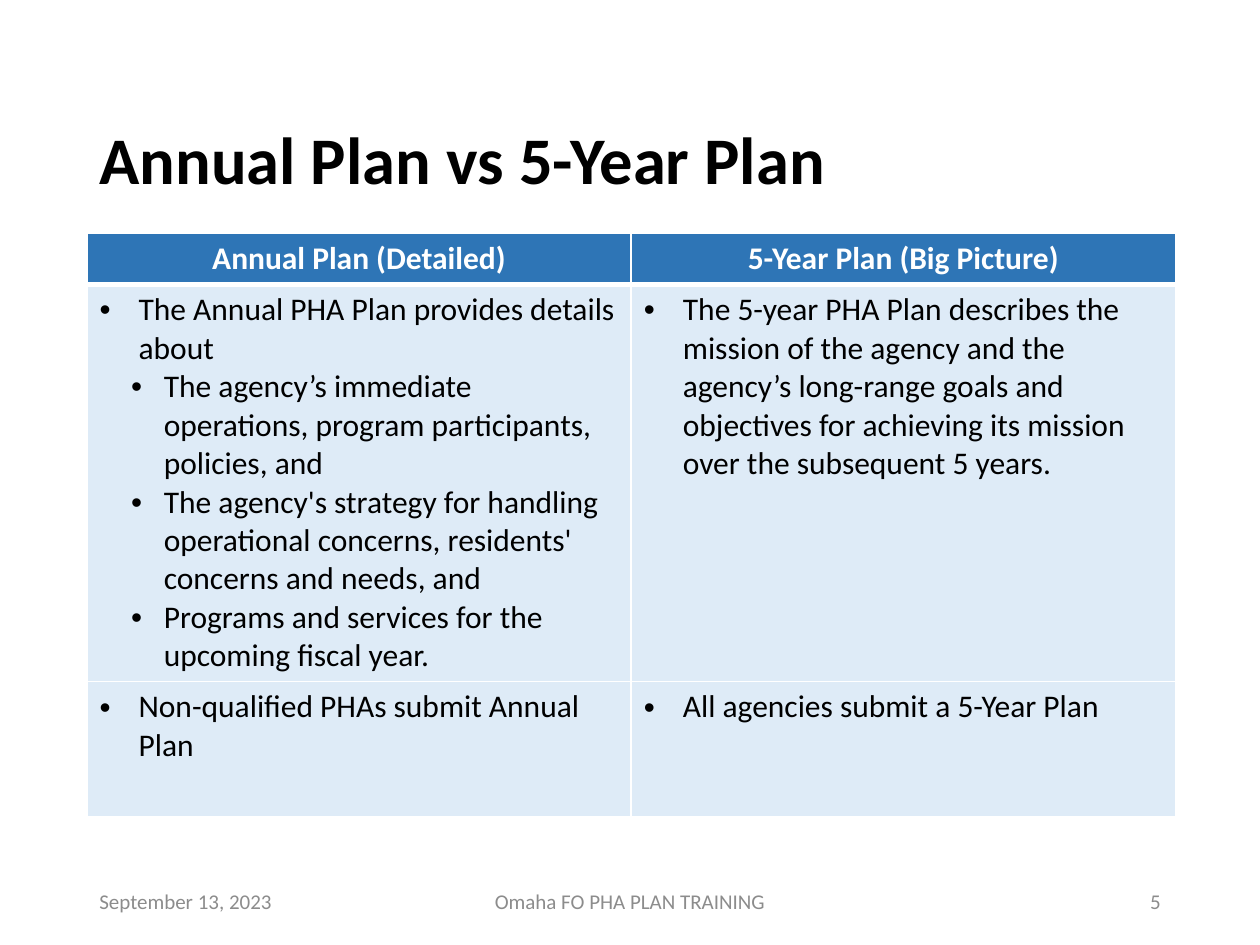
from dataclasses import dataclass

from lxml.etree import SubElement
from pptx import Presentation
from pptx.dml.color import RGBColor
from pptx.enum.text import MSO_ANCHOR, PP_ALIGN
from pptx.oxml.ns import qn
from pptx.util import Inches, Pt


@dataclass(frozen=True)
class Theme:
    font: str = "Calibri"
    text: str = "000000"
    light: str = "FFFFFF"
    header: str = "2E75B6"
    body: str = "DEEBF7"
    muted: str = "8C8C8C"
    title_size: int = 38
    table_size: int = 18
    footer_size: int = 12
    border: int = 1
    heavy_border: int = 3


THEME = Theme()
WIDTH, HEIGHT = Inches(10), Inches(7.5)
MARGIN = 0.069
INDENTS = [(0.31, -0.31), (0.51, -0.26)]
ROW_SHARES = [0.4, 3.15, 1.07]

HEADINGS = ["Annual Plan (Detailed)", "5-Year Plan (Big Picture)"]
COMPARISON = [
    [
        [
            (0, "The Annual PHA Plan provides details about"),
            (1, "The agency’s immediate operations, program participants, policies, and"),
            (1, "The agency's strategy for handling operational concerns, "
                "residents' concerns and needs, and"),
            (1, "Programs and services for the upcoming fiscal year."),
        ],
        [
            (0, "The 5-year PHA Plan describes the mission of the agency and the agency’s "
                "long-range goals and objectives for achieving its mission over the "
                "subsequent 5 years.  "),
        ],
    ],
    [
        [(0, "Non-qualified PHAs submit Annual Plan")],
        [(0, "All agencies submit a 5-Year Plan")],
    ],
]
FOOTER = [
    (0, 0.225, "September 13, 2023", PP_ALIGN.LEFT),
    (0.262, 0.338, "Omaha FO PHA PLAN TRAINING", PP_ALIGN.CENTER),
    (0.637, 0.225, "5", PP_ALIGN.RIGHT),
]


def share_box(left, top, width, height):
    return (int(WIDTH * left), int(HEIGHT * top), int(WIDTH * width), int(HEIGHT * height))


def write_text(paragraph, text, *, size, color, bold=False, align=PP_ALIGN.LEFT, level=None):
    paragraph.alignment = align
    if level is not None:
        paragraph.level = level
        margin, indent = INDENTS[level]
        properties = paragraph._p.get_or_add_pPr()
        properties.set("marL", str(Inches(margin)))
        properties.set("indent", str(Inches(indent)))
        SubElement(properties, qn("a:buFont"), typeface="Arial")
        SubElement(properties, qn("a:buChar"), char="•")
    run = paragraph.add_run()
    run.text = text
    run.font.name = THEME.font
    run.font.size = Pt(size)
    run.font.bold = bold
    run.font.color.rgb = RGBColor.from_string(color)


def style_cell(cell, fill, top, bottom):
    properties = cell._tc.get_or_add_tcPr()
    sides = {"lnL": THEME.border, "lnR": THEME.border, "lnT": top, "lnB": bottom}
    for side, weight in sides.items():
        line = SubElement(properties, qn(f"a:{side}"), w=str(Pt(weight)))
        SubElement(SubElement(line, qn("a:solidFill")), qn("a:srgbClr"), val=THEME.light)
    cell.fill.solid()
    cell.fill.fore_color.rgb = RGBColor.from_string(fill)


def place_title(slide, box):
    title = slide.shapes.title
    title.left, title.top, title.width, title.height = box
    title.text_frame.vertical_anchor = MSO_ANCHOR.MIDDLE
    paragraph = title.text_frame.paragraphs[0]
    paragraph.line_spacing = 0.9
    write_text(paragraph, "Annual Plan vs 5-Year Plan",
               size=THEME.title_size, color=THEME.text, bold=True)


def place_comparison(slide, box):
    height = box[3]
    table = slide.shapes.add_table(len(ROW_SHARES), len(HEADINGS), *box).table
    for row, share in zip(table.rows, ROW_SHARES):
        row.height = int(height * share / sum(ROW_SHARES))
    for column, heading in enumerate(HEADINGS):
        cell = table.cell(0, column)
        style_cell(cell, THEME.header, THEME.border, THEME.heavy_border)
        write_text(cell.text_frame.paragraphs[0], heading, size=THEME.table_size,
                   color=THEME.light, bold=True, align=PP_ALIGN.CENTER)
    for row, contents in enumerate(COMPARISON, start=1):
        for column, items in enumerate(contents):
            cell = table.cell(row, column)
            top = THEME.heavy_border if row == 1 else THEME.border
            style_cell(cell, THEME.body, top, THEME.border)
            frame = cell.text_frame
            for index, (level, text) in enumerate(items):
                paragraph = frame.add_paragraph() if index else frame.paragraphs[0]
                write_text(paragraph, text, size=THEME.table_size,
                           color=THEME.text, level=level)


def place_footer(slide, box):
    left, top, width, height = box
    for offset, share, text, align in FOOTER:
        shape = slide.shapes.add_textbox(left + int(WIDTH * offset), top,
                                         int(WIDTH * share), height)
        frame = shape.text_frame
        frame.word_wrap = True
        frame.vertical_anchor = MSO_ANCHOR.MIDDLE
        write_text(frame.paragraphs[0], text, size=THEME.footer_size,
                   color=THEME.muted, align=align)


def main():
    presentation = Presentation()
    presentation.slide_width, presentation.slide_height = WIDTH, HEIGHT
    slide = presentation.slides.add_slide(presentation.slide_layouts.get_by_name("Title Only"))
    content_width = 1 - 2 * MARGIN
    place_title(slide, share_box(MARGIN, 0.1, content_width, 0.145))
    place_comparison(slide, share_box(MARGIN, 0.247, 0.864, sum(ROW_SHARES) / 7.5))
    place_footer(slide, share_box(MARGIN, 0.927, content_width, 0.053))
    presentation.save("out.pptx")


if __name__ == "__main__":
    main()
